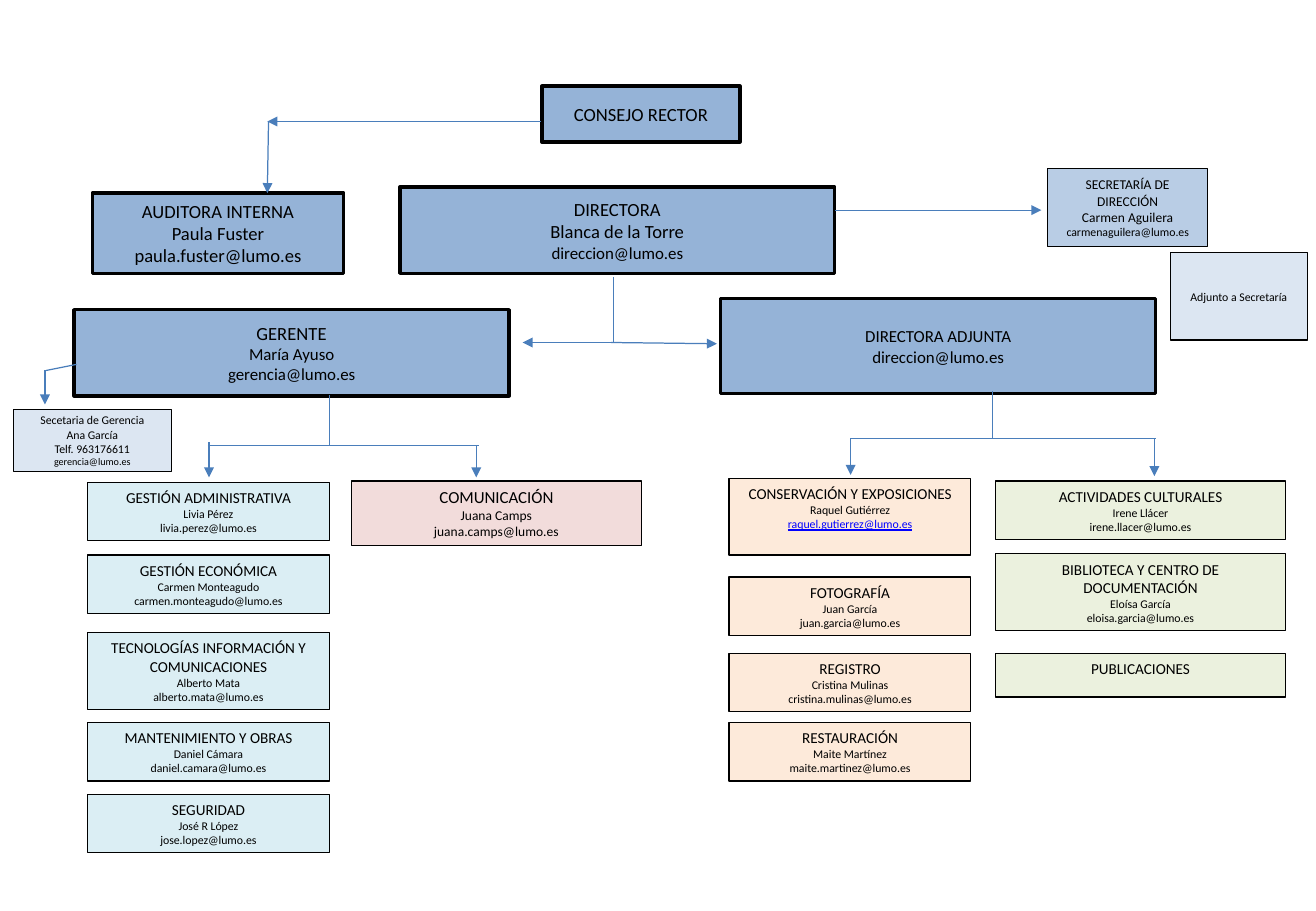
"""Organisation chart of a museum: governing board, management and departments."""
from lxml import etree
from pptx import Presentation
from pptx.dml.color import RGBColor
from pptx.enum import shapes, text
from pptx.oxml import ns
from pptx.util import Inches, Pt

BLACK = RGBColor(0x00, 0x00, 0x00)
LINK = RGBColor(0x00, 0x00, 0xFF)
ARROW = RGBColor(0x4A, 0x7E, 0xBB)
HEAD = RGBColor(0x95, 0xB3, 0xD7)
OFFICE = RGBColor(0xB9, 0xCD, 0xE5)
ASSISTANT = RGBColor(0xDC, 0xE6, 0xF2)
ADMIN = RGBColor(0xDB, 0xEE, 0xF4)
PRESS = RGBColor(0xF2, 0xDC, 0xDB)
COLLECTION = RGBColor(0xFD, 0xEA, 0xDA)
CULTURE = RGBColor(0xEB, 0xF1, 0xDE)

MIDDLE, TOP = text.MSO_ANCHOR.MIDDLE, text.MSO_ANCHOR.TOP
LINKED = "raquel.gutierrez@lumo.es"

chart = Presentation()
chart.slide_width, chart.slide_height = Inches(10.83), Inches(7.5)
slide = chart.slides.add_slide(chart.slide_layouts[6])


def add_box(left, top, width, height, fill, border, anchor, lines):
    box = slide.shapes.add_shape(
        shapes.MSO_SHAPE.RECTANGLE,
        Inches(left), Inches(top), Inches(width), Inches(height))
    box.shadow.inherit = False
    box.fill.solid()
    box.fill.fore_color.rgb = fill
    box.line.color.rgb = BLACK
    box.line.width = Pt(border)
    frame = box.text_frame
    frame.word_wrap = True
    frame.vertical_anchor = anchor
    for index, (words, size) in enumerate(lines):
        paragraph = frame.add_paragraph() if index else frame.paragraphs[0]
        paragraph.alignment = text.PP_ALIGN.CENTER
        run = paragraph.add_run()
        run.text = words
        run.font.name = "Calibri"
        run.font.size = Pt(size)
        run.font.color.rgb = LINK if words == LINKED else BLACK
        if words == LINKED:
            run.font.underline = True


def add_link(start, end, arrow):
    link = slide.shapes.add_connector(
        shapes.MSO_CONNECTOR.STRAIGHT, *map(Inches, (*start, *end)))
    link.line.color.rgb = ARROW
    link.line.width = Pt(0.75)
    if arrow:
        etree.SubElement(link.line._get_or_add_ln(), ns.qn("a:tailEnd"), type="triangle")
    etree.SubElement(link._element.spPr, ns.qn("a:effectLst"))


management = [
    (4.46, 0.71, 1.63, 0.46, [("CONSEJO RECTOR", 11)]),
    (0.76, 1.59, 2.07, 0.66, [
        ("AUDITORA INTERNA", 11), ("Paula Fuster", 11), ("paula.fuster@lumo.es", 11)]),
    (3.29, 1.54, 3.58, 0.71, [
        ("DIRECTORA", 11), ("Blanca de la Torre", 11), ("direccion@lumo.es", 10)]),
    (0.61, 2.55, 3.58, 0.71, [
        ("GERENTE", 11), ("María Ayuso", 10), ("gerencia@lumo.es", 10)]),
    (5.93, 2.46, 3.58, 0.78, [("DIRECTORA ADJUNTA", 10), ("direccion@lumo.es", 10)]),
]
for *place, lines in management:
    add_box(*place, HEAD, 2, MIDDLE, lines)

support = [
    (8.62, 1.39, 1.32, 0.64, OFFICE, [
        ("SECRETARÍA DE DIRECCIÓN", 8), ("Carmen Aguilera", 8),
        ("carmenaguilera@lumo.es", 7)]),
    (9.63, 2.08, 1.13, 0.72, ASSISTANT, [("Adjunto a Secretaría", 7)]),
    (0.11, 3.37, 1.3, 0.51, ASSISTANT, [
        ("Secetaria de Gerencia", 7), ("Ana García", 7),
        ("Telf. 963176611", 7), ("gerencia@lumo.es", 6)]),
]
for *place, fill, lines in support:
    add_box(*place, fill, 0.75, MIDDLE, lines)

SHORT, TALL = 0.48, 0.63
departments = [
    (0.72, 1.99, ADMIN, 9, 7, [
        (3.97, SHORT, "GESTIÓN ADMINISTRATIVA", "Livia Pérez", "livia.perez@lumo.es"),
        (4.57, SHORT, "GESTIÓN ECONÓMICA", "Carmen Monteagudo",
         "carmen.monteagudo@lumo.es"),
        (5.21, TALL, "TECNOLOGÍAS INFORMACIÓN Y COMUNICACIONES", "Alberto Mata",
         "alberto.mata@lumo.es"),
        (5.95, SHORT, "MANTENIMIENTO Y OBRAS", "Daniel Cámara", "daniel.camara@lumo.es"),
        (6.54, SHORT, "SEGURIDAD", "José R López", "jose.lopez@lumo.es")]),
    (2.89, 2.39, PRESS, 10, 8, [
        (3.96, 0.53, "COMUNICACIÓN", "Juana Camps", "juana.camps@lumo.es")]),
    (6, 1.99, COLLECTION, 9, 7, [
        (3.94, TALL, "CONSERVACIÓN Y EXPOSICIONES", "Raquel Gutiérrez", LINKED),
        (4.75, SHORT, "FOTOGRAFÍA", "Juan García", "juan.garcia@lumo.es"),
        (5.38, SHORT, "REGISTRO", "Cristina Mulinas", "cristina.mulinas@lumo.es"),
        (5.95, SHORT, "RESTAURACIÓN", "Maite Martínez", "maite.martinez@lumo.es")]),
    (8.19, 2.39, CULTURE, 9, 7, [
        (3.96, SHORT, "ACTIVIDADES CULTURALES", "Irene Llácer", "irene.llacer@lumo.es"),
        (4.56, TALL, "BIBLIOTECA Y CENTRO DE DOCUMENTACIÓN", "Eloísa García",
         "eloisa.garcia@lumo.es"),
        (5.38, 0.36, "PUBLICACIONES")]),
]
for left, width, fill, title_size, detail_size, units in departments:
    for top, height, title, *details in units:
        lines = [(title, title_size)] + [(detail, detail_size) for detail in details]
        add_box(left, top, width, height, fill, 0.75, TOP, lines)

arrows = [
    ((4.45, 1), (2.2, 1)), ((2.21, 1), (2.2, 1.59)),
    ((6.87, 1.73), (8.57, 1.73)),
    ((5.04, 2.82), (4.3, 2.82)), ((5.03, 2.82), (5.9, 2.83)),
    ((0.37, 3.05), (0.37, 3.33)),
    ((1.72, 3.64), (1.72, 3.93)), ((3.92, 3.67), (3.92, 3.93)),
    ((7, 3.61), (7, 3.91)), ((9.5, 3.61), (9.5, 3.92)),
]
branches = [
    ((5.05, 2.28), (5.05, 2.82)), ((0.38, 3.05), (0.63, 3)),
    ((2.71, 3.25), (2.71, 3.67)), ((1.71, 3.67), (3.94, 3.67)),
    ((8.17, 3.22), (8.17, 3.61)), ((7, 3.61), (9.51, 3.61)),
]
for links, arrow in ((arrows, True), (branches, False)):
    for start, end in links:
        add_link(start, end, arrow)

chart.save("out.pptx")
